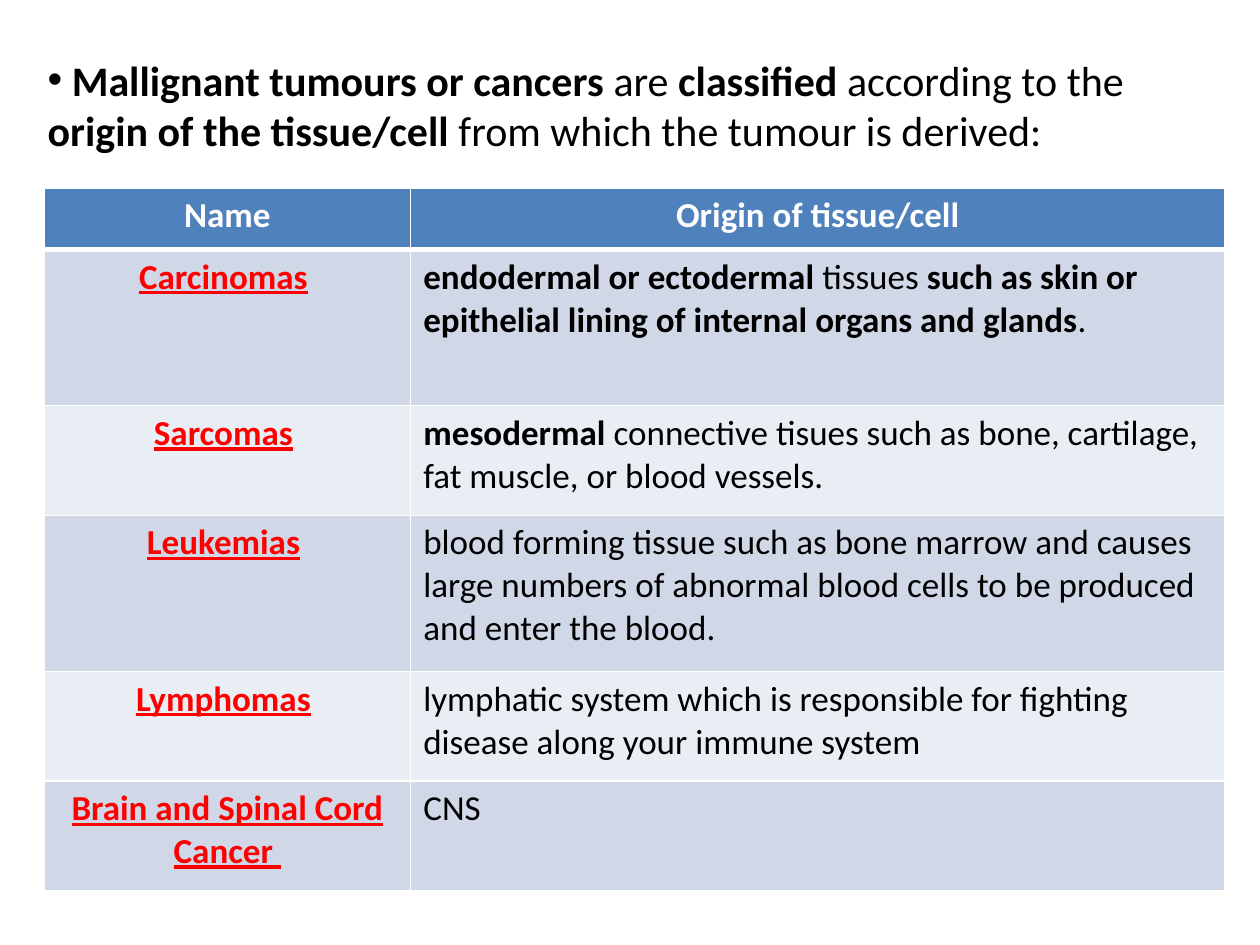
from dataclasses import dataclass

from lxml.etree import SubElement
from pptx import Presentation
from pptx.dml.color import RGBColor
from pptx.enum.text import PP_ALIGN
from pptx.oxml.ns import qn
from pptx.util import Inches, Pt

BLACK = RGBColor(0x00, 0x00, 0x00)
WHITE = RGBColor(0xFF, 0xFF, 0xFF)
RED = RGBColor(0xFF, 0x00, 0x00)
HEADER_BLUE = RGBColor(0x4F, 0x81, 0xBD)
BANDS = (RGBColor(0xD0, 0xD8, 0xE8), RGBColor(0xE9, 0xED, 0xF4))

PLAIN = {"name": "Calibri", "size": Pt(20), "bold": False}
BOLD = PLAIN | {"bold": True}
INTRO = PLAIN | {"size": Pt(24)}
INTRO_BOLD = INTRO | {"bold": True}
TUMOUR_NAME = BOLD | {"underline": True}


@dataclass(frozen=True)
class Span:
    text: str
    style: dict
    color: RGBColor = BLACK


@dataclass(frozen=True)
class TumourRow:
    name: str
    origin: list[Span]
    height: float
    gap: Span = Span(" ", PLAIN)


INTRODUCTION = [
    Span(" ", INTRO),
    Span("Mallignant tumours or cancers ", INTRO_BOLD),
    Span("are ", INTRO),
    Span("classified", INTRO_BOLD),
    Span(" according to the ", INTRO),
    Span("origin of the tissue/cell", INTRO_BOLD),
    Span(" from which the tumour is derived:", INTRO),
]
HEADINGS = ("Name", "Origin of tissue/cell")
HEADER_HEIGHT = 0.49
COLUMN_WIDTHS = (2.91, 6.46)
TUMOURS = [
    TumourRow("Carcinomas", [
        Span("endodermal or ectodermal", BOLD),
        Span(" tissues ", PLAIN),
        Span("such as skin or epithelial lining of internal organs and glands", BOLD),
        Span(".", PLAIN),
    ], 1.24),
    TumourRow("Sarcomas", [
        Span("mesodermal", BOLD),
        Span(" connective tisues such as bone, cartilage, fat muscle, or blood vessels.", PLAIN),
    ], 0.87),
    TumourRow("Leukemias", [
        Span("blood forming tissue such as bone marrow and causes large numbers of "
             "abnormal blood cells to be produced and enter the blood.", PLAIN),
    ], 1.24),
    TumourRow("Lymphomas", [
        Span("lymphatic system which is responsible for fighting disease along "
             "your immune system", PLAIN),
    ], 0.87),
    TumourRow("Brain and Spinal Cord Cancer", [Span("CNS", PLAIN)], 0.87,
              Span(" ", PLAIN | {"underline": True}, RED)),
]


def write_spans(paragraph, spans: list[Span], align: PP_ALIGN = PP_ALIGN.LEFT) -> None:
    paragraph.alignment = align
    for span in spans:
        run = paragraph.add_run()
        run.text = span.text
        for attribute, value in span.style.items():
            setattr(run.font, attribute, value)
        run.font.color.rgb = span.color


def set_borders(cell, widths: dict[str, float]) -> None:
    properties = cell._tc.get_or_add_tcPr()
    for position, (side, width) in enumerate(widths.items()):
        line = properties.makeelement(qn(f"a:{side}"), {"w": str(Pt(width))})
        fill = SubElement(line, qn("a:solidFill"))
        SubElement(fill, qn("a:srgbClr"), val=str(WHITE))
        properties.insert(position, line)


def fill_cell(cell, spans: list[Span], align: PP_ALIGN, fill: RGBColor,
              top: float = 1, bottom: float = 1) -> None:
    write_spans(cell.text_frame.paragraphs[0], spans, align)
    cell.fill.solid()
    cell.fill.fore_color.rgb = fill
    set_borders(cell, {"lnL": 1, "lnR": 1, "lnT": top, "lnB": bottom})


def add_introduction(slide) -> None:
    box = slide.shapes.add_textbox(Inches(0.28), Inches(0.38), Inches(9.45), Inches(1.72))
    box.text_frame.word_wrap = True
    paragraph = box.text_frame.paragraphs[0]
    bullet_properties = paragraph._p.get_or_add_pPr()
    SubElement(bullet_properties, qn("a:buFont"), typeface="Arial")
    SubElement(bullet_properties, qn("a:buChar"), char="•")
    write_spans(paragraph, INTRODUCTION)


def add_tumour_table(slide) -> None:
    heights = [HEADER_HEIGHT] + [tumour.height for tumour in TUMOURS]
    table = slide.shapes.add_table(
        len(heights), len(COLUMN_WIDTHS), Inches(0.35), Inches(1.49),
        Inches(sum(COLUMN_WIDTHS)), Inches(sum(heights))).table
    for column, width in zip(table.columns, COLUMN_WIDTHS):
        column.width = Inches(width)
    for row, height in zip(table.rows, heights):
        row.height = Inches(height)

    # Header row
    for column, heading in enumerate(HEADINGS):
        fill_cell(table.cell(0, column), [Span(heading, BOLD, WHITE)],
                  PP_ALIGN.CENTER, HEADER_BLUE, bottom=3)

    # Tumour rows in alternating bands
    for index, tumour in enumerate(TUMOURS):
        band = BANDS[index % 2]
        top = 3 if index == 0 else 1
        name = [Span(tumour.name, TUMOUR_NAME, RED), tumour.gap]
        fill_cell(table.cell(index + 1, 0), name, PP_ALIGN.CENTER, band, top)
        fill_cell(table.cell(index + 1, 1), tumour.origin, PP_ALIGN.LEFT, band, top)


def main() -> None:
    presentation = Presentation()
    presentation.slide_width = Inches(10)
    presentation.slide_height = Inches(7.5)
    slide = presentation.slides.add_slide(presentation.slide_layouts[6])
    add_introduction(slide)
    add_tumour_table(slide)
    presentation.save("out.pptx")


if __name__ == "__main__":
    main()
